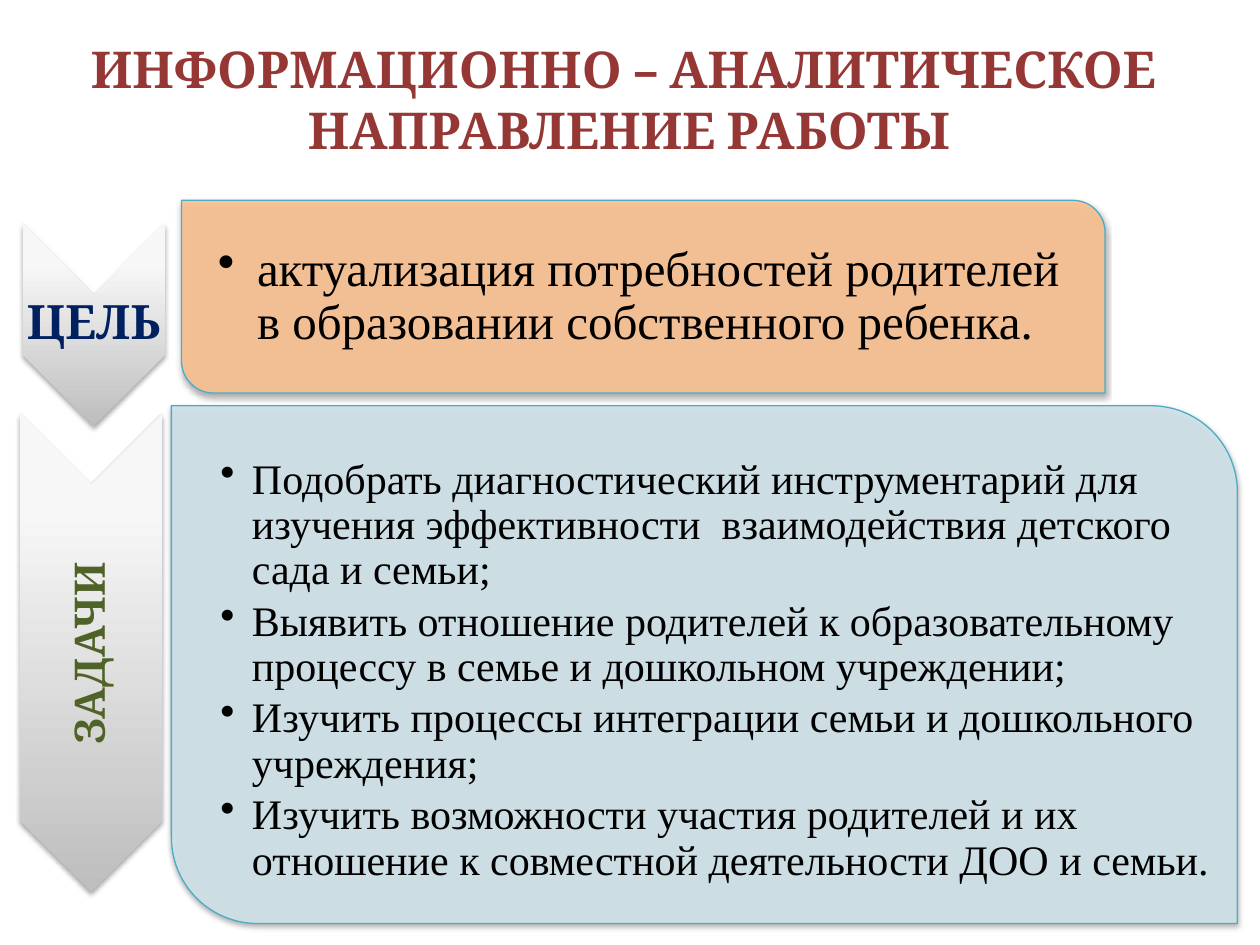
from dataclasses import dataclass

import pptx
import pptx.dml.color
import pptx.enum.shapes
import pptx.enum.text
import pptx.oxml
import pptx.oxml.ns
import pptx.util
from pptx.dml.color import RGBColor
from pptx.util import Inches

MAROON = RGBColor(0x95, 0x37, 0x35)
NAVY = RGBColor(0x00, 0x20, 0x60)
OLIVE = RGBColor(0x4F, 0x62, 0x28)
BLACK = RGBColor(0x00, 0x00, 0x00)
ORANGE = RGBColor(0xFA, 0xC0, 0x90)
PALE_BLUE = RGBColor(0xD0, 0xE3, 0xEA)
TEAL = RGBColor(0x4B, 0xAC, 0xC6)
GRADIENT_STOPS = ((0, RGBColor(0xBE, 0xBE, 0xBE)), (80, RGBColor(0xF7, 0xF7, 0xF7)),
                  (100, RGBColor(0xF8, 0xF8, 0xF8)))

HEADING_FONT = "Cambria"
BODY_FONT = "Times New Roman"
NAMESPACE = pptx.oxml.ns.nsdecls("a")
Shape = pptx.enum.shapes.MSO_SHAPE
Align = pptx.enum.text.PP_ALIGN


@dataclass
class Box:
    left: float
    top: float
    width: float
    height: float

    def lengths(self) -> list:
        return [Inches(n) for n in (self.left, self.top, self.width, self.height)]


@dataclass
class Section:
    label: str
    label_size: float
    label_color: RGBColor
    label_box: Box
    vertical: bool
    chevron: Box
    panel: Box
    panel_color: RGBColor
    items: list[str]
    items_box: Box
    items_size: float
    inset: float
    indent: float


SECTIONS = [
    Section("ЦЕЛЬ", 27, NAVY, Box(0.18, 2.33, 1.13, 0.48), False,
            Box(0.18, 1.77, 1.13, 1.61), Box(1.44, 1.59, 7.33, 1.53), ORANGE,
            ["актуализация потребностей родителей в образовании собственного ребенка."],
            Box(1.51, 1.67, 7.19, 1.38), 28, 0.22, 0.31),
    Section("ЗАДАЧИ", 24, OLIVE, Box(0.16, 3.85, 1.13, 2.67), True,
            Box(0.16, 3.28, 1.13, 3.8), Box(1.36, 3.22, 8.46, 4.11), PALE_BLUE,
            ["Подобрать диагностический инструментарий для изучения эффективности  "
             "взаимодействия детского сада и семьи;",
             "Выявить отношение родителей к образовательному процессу в семье и "
             "дошкольном учреждении;",
             "Изучить процессы интеграции семьи и дошкольного учреждения;",
             "Изучить возможности участия родителей и их отношение к совместной "
             "деятельности ДОО и семьи."],
            Box(1.56, 3.47, 8.06, 3.71), 24, 0.19, 0.25),
]


def add_text(shapes, box: Box, paragraphs: list[str], *, font: str, size: float,
             color: RGBColor, bold: bool = False, align=Align.LEFT,
             insets: tuple = (0.02, 0.02), line_spacing: float = 0.9,
             space_after: float = 0, indent: float = 0, vertical: bool = False) -> None:
    """Add a text box; insets are (left, others), a non-zero indent gives bullets."""
    frame = shapes.add_textbox(*box.lengths()).text_frame
    frame.word_wrap = True
    frame.vertical_anchor = pptx.enum.text.MSO_ANCHOR.MIDDLE
    frame.margin_left = Inches(insets[0])
    frame.margin_right = frame.margin_top = frame.margin_bottom = Inches(insets[1])
    if vertical:
        frame._txBody.bodyPr.set("vert", "vert270")
    for index, text in enumerate(paragraphs):
        paragraph = frame.add_paragraph() if index else frame.paragraphs[0]
        paragraph.text = text
        paragraph.alignment = align
        paragraph.line_spacing = line_spacing
        paragraph.space_after = pptx.util.Pt(space_after)
        if indent:
            properties = paragraph._p.get_or_add_pPr()
            properties.set("marL", str(Inches(indent)))
            properties.set("indent", str(-Inches(indent)))
            properties.append(pptx.oxml.parse_xml(f'<a:buChar {NAMESPACE} char="•"/>'))
        for run in paragraph.runs:
            run.font.name = font
            run.font.size = pptx.util.Pt(size)
            run.font.bold = bold
            run.font.color.rgb = color


def add_turned_shape(shapes, kind, box: Box):
    """Add a shape turned a quarter clockwise so that it covers box on the slide."""
    unturned = Box(box.left + (box.width - box.height) / 2,
                   box.top + (box.height - box.width) / 2, box.height, box.width)
    shape = shapes.add_shape(kind, *unturned.lengths())
    shape.rotation = 90
    shape.shadow.inherit = False
    effects = shape._element.spPr.find(pptx.oxml.ns.qn("a:effectLst"))
    effects.append(pptx.oxml.parse_xml(
        f'<a:outerShdw {NAMESPACE} blurRad="{pptx.util.Pt(3.1)}" dist="{pptx.util.Pt(1.8)}" '
        'dir="5400000" rotWithShape="0"><a:srgbClr val="000000">'
        '<a:alpha val="35000"/></a:srgbClr></a:outerShdw>'))
    return shape


def add_chevron(shapes, box: Box) -> None:
    chevron = add_turned_shape(shapes, Shape.CHEVRON, box)
    chevron.line.fill.background()
    chevron.fill.gradient()
    chevron.fill.gradient_angle = 90
    gradient = chevron._element.spPr.find(pptx.oxml.ns.qn("a:gradFill"))
    gradient.set("rotWithShape", "0")
    stops = gradient.find(pptx.oxml.ns.qn("a:gsLst"))
    for stop in list(stops):
        stops.remove(stop)
    for position, color in GRADIENT_STOPS:
        stops.append(pptx.oxml.parse_xml(
            f'<a:gs {NAMESPACE} pos="{position * 1000}"><a:srgbClr val="{color}"/></a:gs>'))


def add_panel(shapes, box: Box, color: RGBColor) -> None:
    panel = add_turned_shape(shapes, Shape.ROUND_2_DIAG_RECTANGLE, box)
    panel.fill.solid()
    panel.fill.fore_color.rgb = color
    fill_color = panel._element.spPr.find(
        f'{pptx.oxml.ns.qn("a:solidFill")}/{pptx.oxml.ns.qn("a:srgbClr")}')
    fill_color.append(pptx.oxml.parse_xml(f'<a:alpha {NAMESPACE} val="90000"/>'))
    panel.line.color.rgb = TEAL
    panel.line.width = pptx.util.Pt(0.75)


def add_section(shapes, section: Section) -> None:
    add_chevron(shapes, section.chevron)
    add_text(shapes, section.label_box, [section.label], font=HEADING_FONT,
             size=section.label_size, color=section.label_color, bold=True,
             align=Align.CENTER, vertical=section.vertical)
    add_panel(shapes, section.panel, section.panel_color)
    add_text(shapes, section.items_box, section.items, font=BODY_FONT,
             size=section.items_size, color=BLACK, insets=(section.inset, 0.02),
             space_after=3.5, indent=section.indent)


def main() -> None:
    presentation = pptx.Presentation()
    presentation.slide_width = Inches(10)
    presentation.slide_height = Inches(7.5)
    slide = presentation.slides.add_slide(presentation.slide_layouts[6])
    add_text(slide.shapes, Box(0.47, 0.16, 9, 1.25),
             ["ИНФОРМАЦИОННО – АНАЛИТИЧЕСКОЕ \vНАПРАВЛЕНИЕ РАБОТЫ"],
             font=HEADING_FONT, size=29, color=MAROON, bold=True, align=Align.CENTER,
             insets=(0.1, 0.05), line_spacing=1.0)
    diagram = slide.shapes.add_group_shape()
    for section in SECTIONS:
        add_section(diagram.shapes, section)
    presentation.save("out.pptx")


if __name__ == "__main__":
    main()
